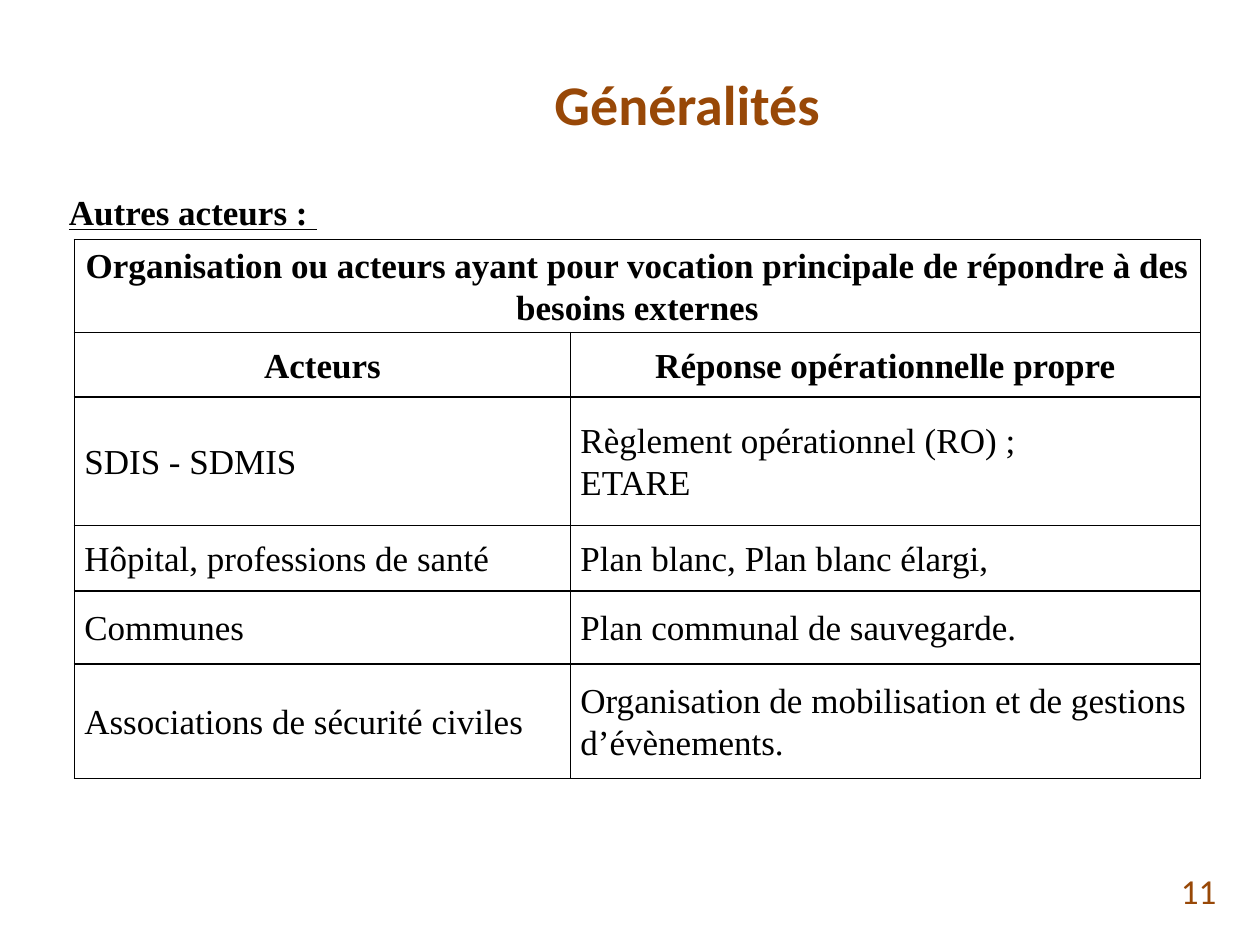
from dataclasses import dataclass

from lxml import etree
from pptx import Presentation
from pptx import util as u
from pptx.dml import color
from pptx.enum import text
from pptx.oxml import ns

BROWN, BLACK = "984807", "000000"
SANS, SERIF = "Calibri", "Times New Roman"
ALIGN, ANCHOR = text.PP_ALIGN, text.MSO_ANCHOR


@dataclass
class Style:
    font: dict
    color: str
    align: int
    spacing: float = 1.0


@dataclass
class Box:
    left: float
    top: float
    width: float
    height: float

    def lengths(self) -> list:
        return [u.Cm(v) for v in (self.left, self.top, self.width, self.height)]


@dataclass
class Row:
    height: float
    cells: list
    header: bool = False


TITLE = Style(dict(name=SANS, size=u.Pt(32), bold=True), BROWN, ALIGN.CENTER)
NUMBER = Style(dict(name=SANS, size=u.Pt(20)), BROWN, ALIGN.RIGHT)
SUBTITLE = Style(dict(name=SERIF, size=u.Pt(20), bold=True, underline=True),
                 BLACK, ALIGN.JUSTIFY, 1.07)
HEADER = Style(dict(name=SERIF, size=u.Pt(20), bold=True), BLACK, ALIGN.CENTER, 1.07)
BODY = Style(dict(name=SERIF, size=u.Pt(20), bold=False), BLACK, ALIGN.JUSTIFY, 1.07)

COLUMNS = [10, 12.7]
ROWS = [
    Row(1.85, ["Organisation ou acteurs ayant pour vocation principale "
               "de répondre à des besoins externes"], True),
    Row(1.3, ["Acteurs", "Réponse opérationnelle propre"], True),
    Row(2.59, ["SDIS - SDMIS", "Règlement opérationnel (RO)\u00a0;\nETARE"]),
    Row(1.32, ["Hôpital, professions de santé", "Plan blanc, Plan blanc élargi,"]),
    Row(1.47, ["Communes", "Plan communal de sauvegarde."]),
    Row(2.31, ["Associations de sécurité civiles",
               "Organisation de mobilisation et de gestions\nd’évènements."]),
]


def rgb(value: str) -> color.RGBColor:
    return color.RGBColor.from_string(value)


def write(tf, content: str, style: Style) -> None:
    tf.word_wrap = True
    for i, line in enumerate(content.split("\n")):
        p = tf.add_paragraph() if i else tf.paragraphs[0]
        p.alignment = style.align
        p.line_spacing = style.spacing
        r = p.add_run()
        r.text = line
        for key, value in style.font.items():
            setattr(r.font, key, value)
        r.font.color.rgb = rgb(style.color)


def add_text(s, box: Box, content: str, style: Style, anchor=ANCHOR.TOP) -> None:
    tf = s.shapes.add_textbox(*box.lengths()).text_frame
    tf.vertical_anchor = anchor
    write(tf, content, style)


def set_borders(cell, value: str, width: float) -> None:
    tc_pr = cell._tc.get_or_add_tcPr()
    for side in "LRTB":
        ln = etree.SubElement(tc_pr, ns.qn(f"a:ln{side}"), w=str(u.Pt(width)))
        fill = etree.SubElement(ln, ns.qn("a:solidFill"))
        etree.SubElement(fill, ns.qn("a:srgbClr"), val=value)


def format_cell(cell, header: bool) -> None:
    set_borders(cell, BLACK, 1)
    cell.fill.background()
    margins = dict(margin_left=0.03 if header else 0.2, margin_right=0.03,
                   margin_top=0.03, margin_bottom=0.03)
    for key, value in margins.items():
        setattr(cell, key, u.Cm(value))
    cell.vertical_anchor = ANCHOR.MIDDLE


def add_actor_table(s, left: float, top: float) -> None:
    box = Box(left, top, sum(COLUMNS), sum(row.height for row in ROWS))
    table = s.shapes.add_table(len(ROWS), len(COLUMNS), *box.lengths()).table
    table.first_row = table.horz_banding = False
    for column, width in zip(table.columns, COLUMNS):
        column.width = u.Cm(width)
    for i, row in enumerate(ROWS):
        table.rows[i].height = u.Cm(row.height)
        for j in range(len(COLUMNS)):
            format_cell(table.cell(i, j), row.header)
        for j, content in enumerate(row.cells):
            write(table.cell(i, j).text_frame, content, HEADER if row.header else BODY)
    table.cell(0, 0).merge(table.cell(0, len(COLUMNS) - 1))


def main() -> None:
    prs = Presentation()
    prs.slide_width, prs.slide_height = u.Cm(25.4), u.Cm(19.05)
    s = prs.slides.add_slide(prs.slide_layouts[5])
    title = s.shapes.title
    title.left, title.top, title.width, title.height = Box(3.1, 0.76, 21.51, 2.62).lengths()
    title.text_frame.vertical_anchor = ANCHOR.MIDDLE
    write(title.text_frame, "Généralités", TITLE)
    add_text(s, Box(18.85, 17.45, 5.92, 1.02), "11", NUMBER, ANCHOR.MIDDLE)
    add_text(s, Box(1.14, 3.66, 22.76, 1.12), "Autres acteurs : ", SUBTITLE)
    add_actor_table(s, 1.5, 4.83)
    prs.save("out.pptx")


if __name__ == "__main__":
    main()
